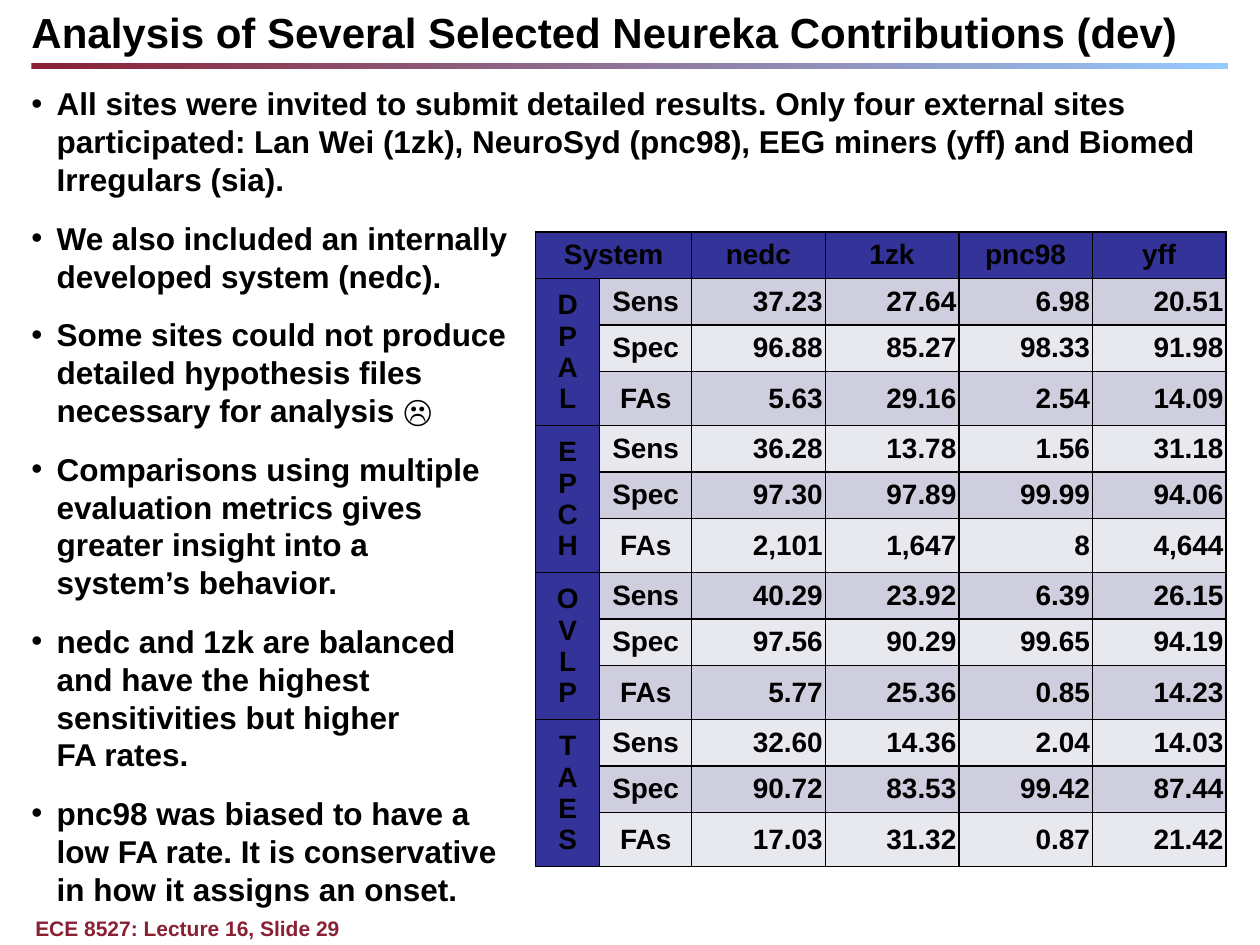
from dataclasses import dataclass

from lxml import etree
from pptx import Presentation
from pptx.dml.color import RGBColor
from pptx.enum.shapes import MSO_SHAPE
from pptx.enum.text import MSO_ANCHOR, PP_ALIGN
from pptx.oxml.ns import qn
from pptx.util import Inches, Pt


@dataclass(frozen=True)
class Theme:
    font: str = "Arial"
    ink: str = "000000"
    maroon: str = "892034"
    sky: str = "95CAFF"
    heading: str = "333399"
    bands: tuple = ("CECEDE", "E8E8EF")
    title_size: int = 24
    body_size: int = 18
    table_size: int = 16
    footer_size: int = 12
    border: int = 1


THEME = Theme()

TITLE = "Analysis of Several Selected Neureka Contributions (dev)"
FOOTER = "ECE 8527: Lecture 16, Slide 29"
BULLETS = [
    "All sites were invited to submit detailed results. Only four external sites "
    "participated: Lan Wei (1zk), NeuroSyd (pnc98), EEG miners (yff) and Biomed "
    "Irregulars (sia).",
    "We also included an internally\ndeveloped system (nedc).",
    "Some sites could not produce\ndetailed hypothesis files\nnecessary for analysis ☹",
    "Comparisons using multiple\nevaluation metrics gives\ngreater insight into a\n"
    "system’s behavior.",
    "nedc and 1zk are balanced\nand have the highest\nsensitivities but higher\nFA rates.",
    "pnc98 was biased to have a\nlow FA rate. It is conservative\nin how it assigns an onset.",
]
SYSTEMS = ["nedc", "1zk", "pnc98", "yff"]
MEASURES = ["Sens", "Spec", "FAs"]
SCORES = {
    "DPAL": [
        ["37.23", "27.64", "6.98", "20.51"],
        ["96.88", "85.27", "98.33", "91.98"],
        ["5.63", "29.16", "2.54", "14.09"],
    ],
    "EPCH": [
        ["36.28", "13.78", "1.56", "31.18"],
        ["97.30", "97.89", "99.99", "94.06"],
        ["2,101", "1,647", "8", "4,644"],
    ],
    "OVLP": [
        ["40.29", "23.92", "6.39", "26.15"],
        ["97.56", "90.29", "99.65", "94.19"],
        ["5.77", "25.36", "0.85", "14.23"],
    ],
    "TAES": [
        ["32.60", "14.36", "2.04", "14.03"],
        ["90.72", "83.53", "99.42", "87.44"],
        ["17.03", "31.32", "0.87", "21.42"],
    ],
}

LEFT, WIDTH = 0.25, 9.5
METRIC_WIDTH, MEASURE_WIDTH, SYSTEM_WIDTH = 0.51, 0.73, 1.06
HEADER_HEIGHT = 0.37
MEASURE_HEIGHTS = [0.37, 0.37, 0.42]


def set_font(paragraph, size, color=THEME.ink):
    font = paragraph.font
    font.name, font.size, font.bold = THEME.font, Pt(size), True
    font.color.rgb = RGBColor.from_string(color)


def add_text_frame(slide, left, top, width, height):
    frame = slide.shapes.add_textbox(*map(Inches, (left, top, width, height))).text_frame
    frame.word_wrap = True
    frame.margin_left = frame.margin_top = frame.margin_right = frame.margin_bottom = 0
    return frame


def add_line(slide, text, box, size, color=THEME.ink, anchor=MSO_ANCHOR.TOP):
    frame = add_text_frame(slide, *box)
    frame.vertical_anchor = anchor
    frame.paragraphs[0].text = text
    set_font(frame.paragraphs[0], size, color)


def add_title_rule(slide):
    rule = slide.shapes.add_shape(
        MSO_SHAPE.RECTANGLE, *map(Inches, (LEFT, 0.5, WIDTH, 0.05)))
    rule.shadow.inherit = False
    rule.line.fill.background()
    rule.fill.gradient()
    rule.fill.gradient_angle = 0
    for stop, color in zip(rule.fill.gradient_stops, (THEME.maroon, THEME.sky)):
        stop.color.rgb = RGBColor.from_string(color)


def add_bullets(slide):
    frame = add_text_frame(slide, LEFT, 0.67, WIDTH, 6.56)
    for index, bullet in enumerate(BULLETS):
        paragraph = frame.add_paragraph() if index else frame.paragraphs[0]
        paragraph.text = bullet
        paragraph.space_after = Pt(12)
        properties = paragraph._p.get_or_add_pPr()
        properties.set("marL", str(Inches(0.2)))
        properties.set("indent", str(-Inches(0.2)))
        etree.SubElement(properties, qn("a:buFont"), typeface=THEME.font)
        etree.SubElement(properties, qn("a:buChar"), char="•")
        set_font(paragraph, THEME.body_size)


def add_borders(cell):
    properties = cell._tc.get_or_add_tcPr()
    for side in ("lnL", "lnR", "lnT", "lnB"):
        line = etree.SubElement(properties, qn(f"a:{side}"), w=str(Pt(THEME.border)))
        fill = etree.SubElement(line, qn("a:solidFill"))
        etree.SubElement(fill, qn("a:srgbClr"), val=THEME.ink)


def fill_cell(cell, text, color, align=PP_ALIGN.CENTER, margin=0.01):
    cell.fill.solid()
    cell.fill.fore_color.rgb = RGBColor.from_string(color)
    cell.vertical_anchor = MSO_ANCHOR.MIDDLE
    cell.margin_left = cell.margin_right = Inches(0.02)
    cell.margin_top = cell.margin_bottom = Inches(margin)
    paragraph = cell.text_frame.paragraphs[0]
    paragraph.text = text
    paragraph.alignment = align
    set_font(paragraph, THEME.table_size)


def add_score_table(slide):
    widths = [METRIC_WIDTH, MEASURE_WIDTH] + [SYSTEM_WIDTH] * len(SYSTEMS)
    heights = [HEADER_HEIGHT] + MEASURE_HEIGHTS * len(SCORES)
    table = slide.shapes.add_table(
        len(heights), len(widths), Inches(4.25), Inches(1.84),
        Inches(sum(widths)), Inches(sum(heights))).table
    for column, width in zip(table.columns, widths):
        column.width = Inches(width)
    for row, height in zip(table.rows, heights):
        row.height = Inches(height)
    for cell in table.iter_cells():
        add_borders(cell)

    table.cell(0, 0).merge(table.cell(0, 1))
    fill_cell(table.cell(0, 0), "System", THEME.heading, margin=0.05)
    for column, system in enumerate(SYSTEMS, 2):
        fill_cell(table.cell(0, column), system, THEME.heading)

    for group, (metric, results) in enumerate(SCORES.items()):
        first = 1 + group * len(MEASURES)
        metric_cell = table.cell(first, 0)
        metric_cell.merge(table.cell(first + len(MEASURES) - 1, 0))
        fill_cell(metric_cell, "\n".join(metric), THEME.heading, margin=0.05)
        for row, (measure, scores) in enumerate(zip(MEASURES, results), first):
            band = THEME.bands[(row - 1) % 2]
            fill_cell(table.cell(row, 1), measure, band)
            for column, score in enumerate(scores, 2):
                fill_cell(table.cell(row, column), score, band, PP_ALIGN.RIGHT)


def main():
    deck = Presentation()
    deck.slide_width, deck.slide_height = Inches(10), Inches(7.5)
    slide = deck.slides.add_slide(deck.slide_layouts[6])
    add_title_rule(slide)
    add_line(slide, FOOTER, (0.28, 7.27, 8.92, 0.2), THEME.footer_size, THEME.maroon)
    add_bullets(slide)
    add_line(slide, TITLE, (LEFT, 0, WIDTH, 0.5), THEME.title_size,
             anchor=MSO_ANCHOR.MIDDLE)
    add_score_table(slide)
    deck.save("out.pptx")


if __name__ == "__main__":
    main()
